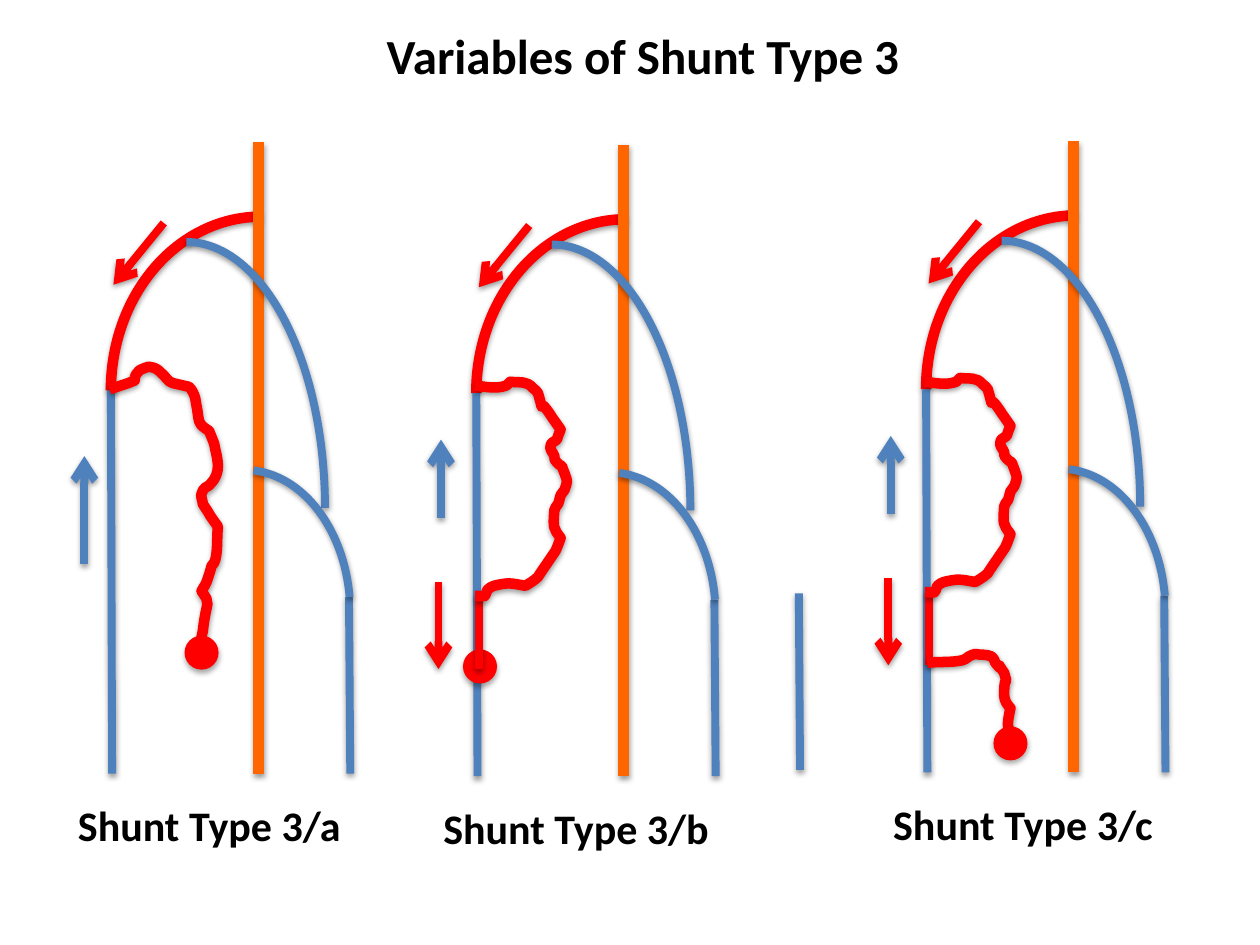
import pptx
import pptx.dml.color
import pptx.enum.shapes
import pptx.enum.text
import pptx.util
from lxml import etree
from pptx.oxml.ns import qn

RED = pptx.dml.color.RGBColor(0xFF, 0x00, 0x00)
BLUE = pptx.dml.color.RGBColor(0x4F, 0x81, 0xBD)
ORANGE = pptx.dml.color.RGBColor(0xFF, 0x66, 0x00)
BLACK = pptx.dml.color.RGBColor(0x00, 0x00, 0x00)
CM_PER_INCH = 2.54
THICK, THIN = 6, 4.5
DOT_SIZE = 0.26

TITLE = "Variables of Shunt Type 3"

LONG_VEIN = [
    (87, 309), (102, 304), (107, 302),
    (107, 300, 107, 298, 109, 296), (110, 293, 116, 292, 118, 291),
    (123, 292, 124, 292, 128, 296), (131, 298, 133, 303, 137, 304), (150, 307),
    (151, 308, 152, 309, 153, 311), (154, 312, 154, 314, 155, 316),
    (155, 318, 156, 320, 156, 322), (157, 326, 157, 330, 158, 334),
    (159, 338, 163, 340, 166, 342), (170, 352), (171, 357),
    (172, 361, 173, 366, 173, 370), (173, 375, 171, 380, 168, 383),
    (167, 385, 165, 386, 163, 387), (162, 388, 160, 390, 160, 392),
    (159, 394, 161, 397, 161, 400), (162, 402, 164, 404, 165, 406),
    (167, 410, 171, 415, 173, 418), (172, 427, 173, 436, 171, 444),
    (171, 446, 169, 448, 168, 449), (167, 453, 166, 456, 165, 459),
    (164, 461, 164, 463, 163, 464), (160, 469),
    (168, 481, 164, 474, 161, 501), (161, 502, 160, 504, 160, 506),
    (159, 509, 160, 512, 160, 516),
]
LOOP_VEIN = [
    (87, 304), (95, 305, 104, 307, 112, 304), (113, 303, 114, 302, 115, 301),
    (123, 302, 128, 300, 133, 306), (135, 307, 136, 309, 137, 310),
    (144, 334, 134, 307, 148, 329), (155, 339),
    (154, 341, 153, 344, 152, 347), (150, 349, 147, 349, 147, 352),
    (146, 355, 149, 357, 150, 360), (150, 362, 150, 364, 152, 365),
    (153, 367, 155, 367, 156, 368), (157, 371, 160, 378, 160, 380),
    (160, 382, 159, 384, 158, 387), (157, 388, 156, 390, 155, 391),
    (154, 394, 154, 396, 153, 398), (152, 400, 150, 401, 150, 403),
    (149, 417, 149, 417, 155, 425), (150, 438, 153, 432, 145, 444),
    (143, 447, 138, 454, 137, 456), (134, 459, 127, 463, 127, 463),
    (116, 461, 114, 460, 102, 463), (100, 463, 99, 465, 97, 466),
    (94, 473, 97, 471, 87, 471),
]
LOWER_VEIN = [
    (89, 527), (98, 526, 108, 527, 117, 525), (119, 525, 120, 523, 122, 522),
    (123, 521, 125, 521, 127, 520), (131, 521, 136, 520, 140, 522),
    (142, 523, 142, 525, 143, 527), (153, 539, 140, 520, 150, 535),
    (154, 550, 150, 531, 150, 553), (150, 557, 153, 561, 155, 563),
    (154, 568, 153, 572, 153, 576), (153, 579, 155, 582, 155, 585),
    (155, 587, 155, 589, 155, 591),
]

UP_ARROW = ("line", (0.6, 4.09), (0.6, 3.47), BLUE, THIN, True)
REFLUX = [
    ("line", (0.58, 4.6), (0.58, 5.29), RED, THIN, True),
    ("line", (0.9, 4.72), (0.9, 5.29), RED, THIN),
    ("vein", LOOP_VEIN),
]
ANATOMY = [
    ("arc", (0.88, 1.72, 2.38, 2.76), RED, THICK, True),
    ("line", (2.05, 1.13), (2.05, 6.14), ORANGE, THICK),
    ("arc", (0.38, 1.92, 2.2, 4.22), BLUE, THIN),
    ("line", (0.88, 3.1), (0.89, 6.14), BLUE, THIN),
    ("line", (2.77, 4.74), (2.78, 6.14), BLUE, THIN),
    ("arc", (1.1, 3.73, 1.68, 2.27), BLUE, THIN, False, (164.21, 210.86)),
]
DOWN_ARROW = ("line", (1.3, 1.77), (0.9, 2.26), RED, THIN, True)
PANELS = [
    ("Shunt Type 3/a", (0, 0), [
        ("vein", LONG_VEIN), ("dot", 1.47, 5.05), DOWN_ARROW,
        ("line", (0.67, 4.48), (0.67, 3.62), BLUE, THIN, True)]),
    ("Shunt Type 3/b", (2.9, 0.02), [
        ("dot", 0.78, 5.14), DOWN_ARROW, UP_ARROW, *REFLUX,
        ("line", (3.44, 4.69), (3.45, 6.09), BLUE, THIN)]),
    ("Shunt Type 3/c", (6.47, -0.01), [
        DOWN_ARROW, UP_ARROW, *REFLUX, ("vein", LOWER_VEIN), ("dot", 1.42, 5.78)]),
]


def inches(value):
    return pptx.util.Cm(value * CM_PER_INCH)


def add_shadow(part, opacity=38000, distance=20000):
    properties = part._element.spPr
    effects = properties.find(qn("a:effectLst"))
    if effects is None:
        effects = etree.SubElement(properties, qn("a:effectLst"))
    shadow = etree.SubElement(effects, qn("a:outerShdw"), blurRad="40000",
                              dist=str(distance), dir="5400000", rotWithShape="0")
    color = etree.SubElement(shadow, qn("a:srgbClr"), val="000000")
    etree.SubElement(color, qn("a:alpha"), val=str(opacity))


def set_outline(part, color, width):
    part.line.color.rgb = color
    part.line.width = pptx.util.Pt(width)


def draw_line(shapes, origin, start, end, color, width, arrow=False):
    ends = [inches(o + v) for point in (start, end) for o, v in zip(origin, point)]
    line = shapes.add_connector(pptx.enum.shapes.MSO_CONNECTOR.STRAIGHT, *ends)
    set_outline(line, color, width)
    if arrow:
        etree.SubElement(line.line._get_or_add_ln(), qn("a:tailEnd"), type="arrow")
    add_shadow(line)


def draw_arc(shapes, origin, box, color, width, flipped=False, angles=()):
    left, top, across, down = box
    arc = shapes.add_shape(pptx.enum.shapes.MSO_SHAPE.ARC, inches(origin[0] + left),
                           inches(origin[1] + top), inches(across), inches(down))
    for index, angle in enumerate(angles):
        arc.adjustments[index] = angle
    if flipped:
        arc._element.spPr.xfrm.set("flipH", "1")
    arc.fill.background()
    set_outline(arc, color, width)
    arc.shadow.inherit = False
    add_shadow(arc)


def bend_segments(vein, segments):
    steps = list(vein._element.iter(qn("a:lnTo")))
    for step, segment in zip(steps, segments):
        if len(segment) == 1:
            continue
        curve = etree.Element(qn("a:cubicBezTo"))
        for x, y in segment:
            etree.SubElement(curve, qn("a:pt"), x=str(x - vein.left), y=str(y - vein.top))
        step.getparent().replace(step, curve)


def draw_vein(shapes, origin, outline):
    segments = [[(inches(origin[0] + x / 100), inches(origin[1] + y / 100))
                 for x, y in zip(values[::2], values[1::2])] for values in outline]
    builder = shapes.build_freeform(*segments[0][0])
    builder.add_line_segments([segment[-1] for segment in segments[1:]], close=False)
    vein = builder.convert_to_shape()
    bend_segments(vein, segments[1:])
    vein.fill.background()
    set_outline(vein, RED, THICK)
    vein.shadow.inherit = False
    add_shadow(vein)


def draw_dot(shapes, origin, left, top):
    dot = shapes.add_shape(pptx.enum.shapes.MSO_SHAPE.OVAL, inches(origin[0] + left),
                           inches(origin[1] + top), inches(DOT_SIZE), inches(DOT_SIZE))
    dot.fill.solid()
    dot.fill.fore_color.rgb = RED
    set_outline(dot, RED, 0.75)
    dot.shadow.inherit = False
    add_shadow(dot, 35000, 23000)


def draw_text(shapes, text, box, size, wrap):
    frame = shapes.add_textbox(*map(inches, box)).text_frame
    frame.text = text
    frame.word_wrap = wrap
    frame.auto_size = pptx.enum.text.MSO_AUTO_SIZE.SHAPE_TO_FIT_TEXT
    font = frame.paragraphs[0].runs[0].font
    font.name, font.size, font.bold = "Calibri", pptx.util.Pt(size), True
    font.color.rgb = BLACK


DRAW = {"line": draw_line, "arc": draw_arc, "vein": draw_vein, "dot": draw_dot}


def main():
    deck = pptx.Presentation()
    deck.slide_width, deck.slide_height = inches(10), inches(7.5)
    shapes = deck.slides.add_slide(deck.slide_layouts[6]).shapes
    draw_text(shapes, TITLE, (2.97, 0.15, 4.32, 0.57), 28, False)
    for label, origin, flow in PANELS:
        for kind, *details in ANATOMY + flow:
            DRAW[kind](shapes, origin, *details)
        draw_text(shapes, label, (origin[0] + 0.52, origin[1] + 6.3, 2.48, 0.5), 24, True)
    deck.save("out.pptx")


if __name__ == "__main__":
    main()
